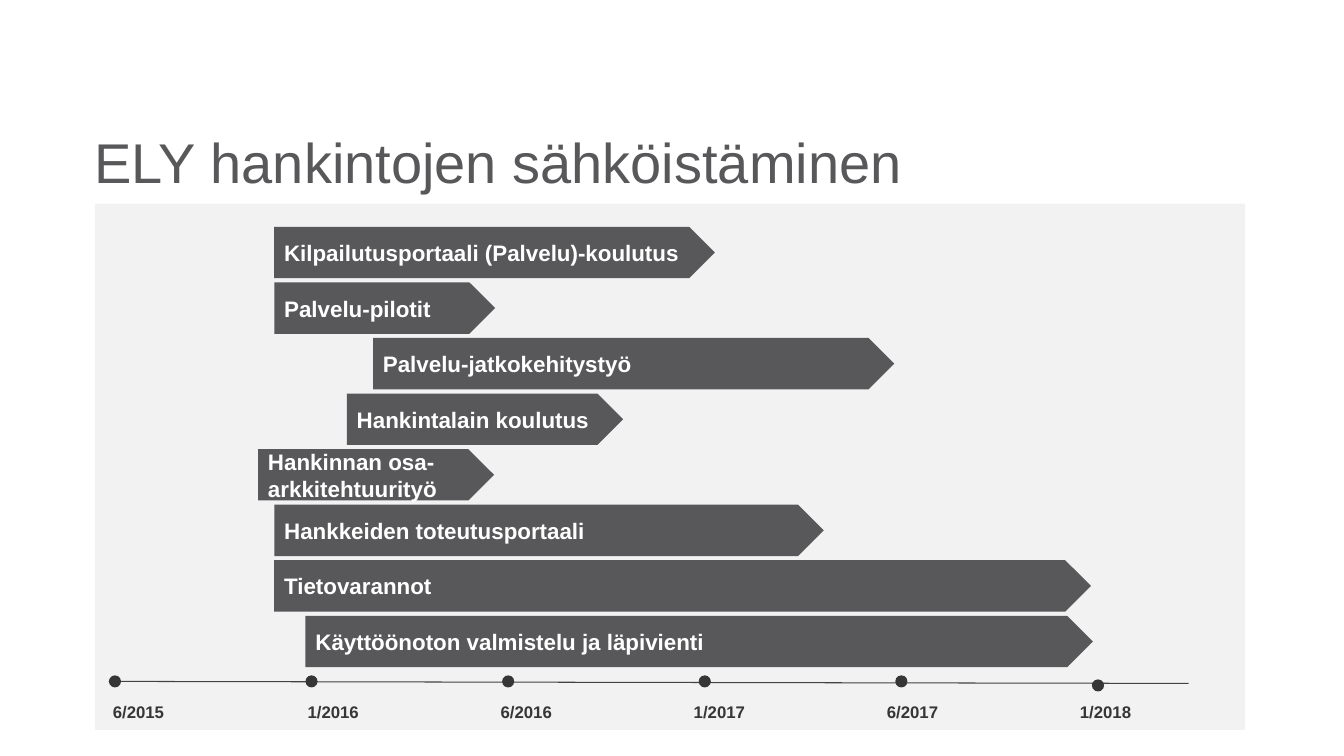
from dataclasses import dataclass

from lxml import etree
from pptx import Presentation
from pptx.dml.color import RGBColor
from pptx.enum.shapes import MSO_CONNECTOR, MSO_SHAPE
from pptx.enum.text import MSO_ANCHOR, PP_ALIGN
from pptx.oxml.ns import qn
from pptx.util import Inches, Pt

RECT, ARROW, DOT = MSO_SHAPE.RECTANGLE, MSO_SHAPE.PENTAGON, MSO_SHAPE.OVAL
LINE = MSO_CONNECTOR.STRAIGHT
LEFT, CENTER = PP_ALIGN.LEFT, PP_ALIGN.CENTER
TOP, MIDDLE = MSO_ANCHOR.TOP, MSO_ANCHOR.MIDDLE


@dataclass(frozen=True)
class Theme:
    font: str = "Arial"
    panel: str = "F2F2F2"
    bar: str = "58585A"
    ink: str = "363636"
    axis: str = "424243"
    white: str = "FFFFFF"
    title: int = 40
    task: int = 16
    date: int = 12


THEME = Theme()

# Task name, start from panel left, length
TASKS = [
    ("Kilpailutusportaali (Palvelu)-koulutus", 1.78, 4.37),
    ("Palvelu-pilotit", 1.78, 2.19),
    ("Palvelu-jatkokehitystyö", 2.76, 5.17),
    ("Hankintalain koulutus", 2.5, 2.74),
    ("Hankinnan osa-arkkitehtuurityö", 1.62, 2.34),
    ("Hankkeiden toteutusportaali", 1.78, 5.45),
    ("Tietovarannot", 1.78, 8.1),
    ("Käyttöönoton valmistelu ja läpivienti", 2.09, 7.81),
]
DATES = ["6/2015", "1/2016", "6/2016", "1/2017", "6/2017", "1/2018"]


def color(code):
    return RGBColor.from_string(code)


def shape(slide, kind, box, fill):
    item = slide.shapes.add_shape(kind, *map(Inches, box))
    item.shadow.inherit = False
    item.fill.solid()
    item.fill.fore_color.rgb = color(fill)
    item.line.fill.background()
    return item


def write(item, text, size, ink, bold=True, align=LEFT, anchor=TOP):
    frame = item.text_frame
    frame.word_wrap = True
    frame.vertical_anchor = anchor
    para = frame.paragraphs[0]
    para.text = text
    para.alignment = align
    font = para.font
    font.name, font.size, font.bold = THEME.font, Pt(size), bold
    font.color.rgb = color(ink)
    return frame


def title(slide, box, text):
    item = slide.shapes.add_textbox(*map(Inches, box))
    frame = write(item, text, THEME.title, THEME.bar, bold=False)
    frame.margin_top, frame.margin_bottom = Inches(0.11), 0


def tasks(slide, box):
    """Stack one arrow per task, in equal rows."""
    x, y, _, high = box
    step = high / len(TASKS)
    for row, (name, start, span) in enumerate(TASKS):
        item = shape(slide, ARROW, (x + start, y + row * step, span, 0.51), THEME.bar)
        write(item, name, THEME.task, THEME.white, anchor=MIDDLE)


def axis(slide, box):
    """Draw the time line with its dots and dates."""
    x, y, wide, _ = box
    ends = (x, y + 0.06, x + wide, y + 0.08)
    line = slide.shapes.add_connector(LINE, *map(Inches, ends))
    line.line.color.rgb = color(THEME.axis)
    line.line.width = Pt(0.75)
    etree.SubElement(line._element.spPr, qn("a:effectLst"))

    last = len(DATES) - 1
    for col, date in enumerate(DATES):
        drop = 0.04 if col == last else 0
        shape(slide, DOT, (x + col * 1.95, y + drop, 0.12, 0.12), THEME.ink)
        # The first date is flush with the start of the line
        left, span, align = (-0.06, 1.02, LEFT) if col == 0 else (
            1.48 + (col - 1) * 1.915, 1.49, CENTER)
        place = (x + left, y + 0.21, span, 0.3)
        label = slide.shapes.add_textbox(*map(Inches, place))
        write(label, date, THEME.date, THEME.ink, align=align)


def plan(slide, box):
    x, y, wide, _ = box
    shape(slide, RECT, box, THEME.panel)
    tasks(slide, (x, y + 0.23, wide, 4.41))
    axis(slide, (x + 0.14, y + 4.68, 10.71, 0.51))


def main():
    deck = Presentation()
    deck.slide_width, deck.slide_height = Inches(13.33), Inches(7.5)
    slide = deck.slides.add_slide(deck.slide_layouts[6])
    title(slide, (0.84, 1.16, 11.42, 0.7), "ELY hankintojen sähköistäminen")
    plan(slide, (0.94, 2.02, 11.41, 5.22))
    deck.save("out.pptx")


if __name__ == "__main__":
    main()
